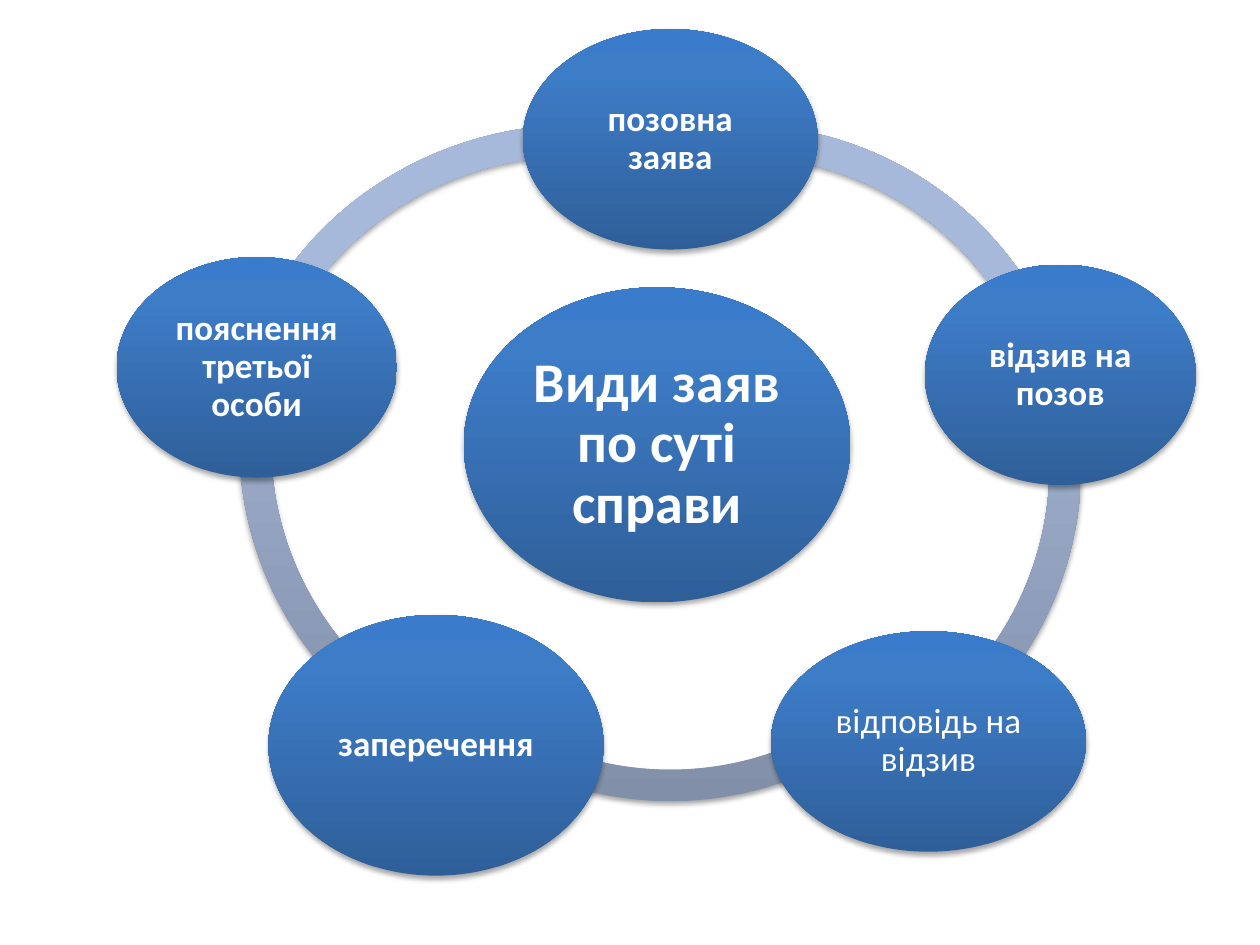
from copy import deepcopy
from dataclasses import dataclass

from lxml.etree import SubElement
from pptx import Presentation
from pptx.dml.color import RGBColor
from pptx.enum.shapes import MSO_SHAPE
from pptx.enum.text import MSO_ANCHOR, PP_ALIGN
from pptx.oxml.ns import qn
from pptx.util import Pt


@dataclass(frozen=True)
class Theme:
    font: str = "Calibri"
    centre_size: int = 32
    node_size: int = 20
    text: str = "FFFFFF"
    shadow: str = "000000"
    node: tuple = ((0, "2F5F99"), (0.8, "3D7CC7"), (1, "3A7CCB"))
    ring: tuple = ((0, "818FA8"), (0.8, "A7B9DA"), (1, "A7BADC"))


class RingDiagram:
    """Draws ring segments and labelled ovals on one slide in a shared style."""

    def __init__(self, slide, theme):
        self.slide = slide
        self.theme = theme

    def _solid(self, preset, box, gradient):
        shape = self.slide.shapes.add_shape(preset, *map(Pt, box))
        shape.line.fill.background()
        shape.fill.gradient()
        shape.fill.gradient_angle = 90
        stops = shape._element.spPr.find(qn("a:gradFill")).find(qn("a:gsLst"))
        stops.append(deepcopy(stops[0]))
        for stop, (position, colour) in zip(shape.fill.gradient_stops, gradient):
            stop.position = position
            stop.color.rgb = RGBColor.from_string(colour)
        self._cast_shadow(shape)
        return shape

    def _cast_shadow(self, shape):
        shape.shadow.inherit = False
        effects = shape._element.spPr.find(qn("a:effectLst"))
        shadow = SubElement(effects, qn("a:outerShdw"), blurRad=str(Pt(3.1)),
                            dist=str(Pt(1.8)), dir="5400000", rotWithShape="0")
        colour = SubElement(shadow, qn("a:srgbClr"), val=self.theme.shadow)
        SubElement(colour, qn("a:alpha"), val="35000")

    def segment(self, box, start, end):
        arc = self._solid(MSO_SHAPE.BLOCK_ARC, box, self.theme.ring)
        for index, value in enumerate((start, end, 0.046)):
            arc.adjustments[index] = value

    def oval(self, label, box, size, inset, bold=True):
        frame = self._solid(MSO_SHAPE.OVAL, box, self.theme.node).text_frame
        margins = {f"margin_{side}": Pt(inset) for side in ("left", "top", "right", "bottom")}
        paragraph = frame.paragraphs[0]
        run = paragraph.add_run()
        run.text = label
        run.font.color.rgb = RGBColor.from_string(self.theme.text)
        formats = (
            (frame, {"word_wrap": True, "vertical_anchor": MSO_ANCHOR.MIDDLE, **margins}),
            (paragraph, {"alignment": PP_ALIGN.CENTER, "line_spacing": 0.9}),
            (run.font, {"name": self.theme.font, "size": Pt(size), "bold": bold}),
        )
        for target, values in formats:
            for name, value in values.items():
                setattr(target, name, value)


SEGMENTS = (
    ((128.9, 71.3, 402.5, 384.5), 117.785, 171.636),
    ((136.8, 57.6, 391.7, 391.7), 69.688, 115.897),
    ((187.2, 66.2, 391.7, 391.7), 25.324, 82.263),
    ((226.1, 70.6, 391.7, 391.7), 206.47, 33.175),
    ((226.1, 71.3, 391.7, 391.7), 155.009, 206.298),
)
STATEMENTS = (
    ("позовна заява", (298.8, 16.6, 168.5, 126), True),
    ("відзив на позов", (528.5, 151.2, 154.8, 126), True),
    ("відповідь на відзив", (440.6, 360.7, 180, 126), False),
    ("заперечення", (153.4, 351.4, 191.5, 149), True),
    ("пояснення третьої особи", (66.6, 146.9, 160.2, 126), True),
)


def main():
    deck = Presentation()
    deck.slide_width, deck.slide_height = Pt(720), Pt(540)
    theme = Theme()
    diagram = RingDiagram(deck.slides.add_slide(deck.slide_layouts[6]), theme)
    for box, start, end in SEGMENTS:
        diagram.segment(box, start, end)
    diagram.oval("Види заяв по суті справи", (265, 164.2, 221, 180), theme.centre_size, 2.9)
    for label, box, bold in STATEMENTS:
        diagram.oval(label, box, theme.node_size, 2.2, bold)
    deck.save("out.pptx")


if __name__ == "__main__":
    main()
